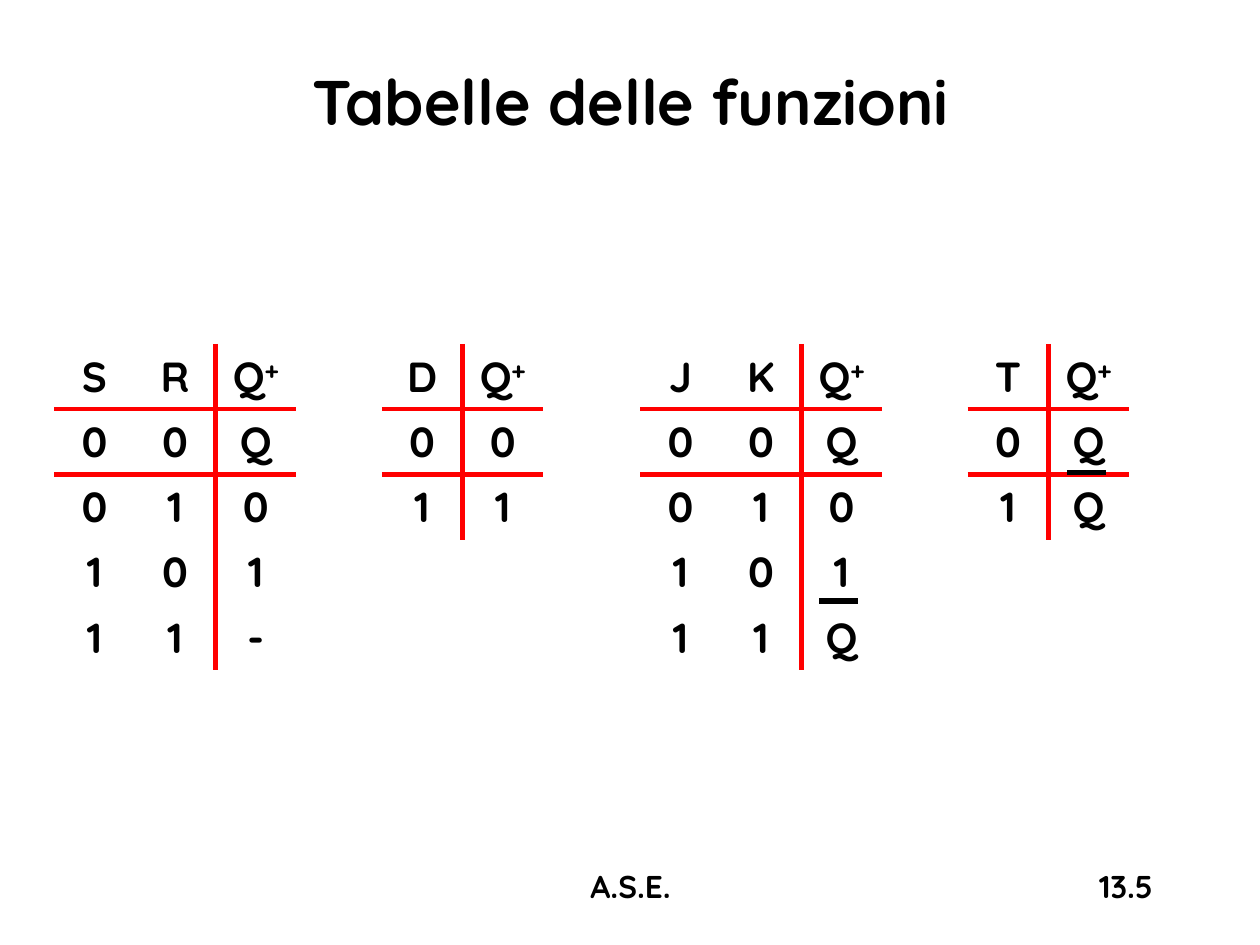
from pptx import Presentation
from pptx.dml.color import RGBColor
from pptx.enum import shapes, text
from pptx.oxml import parse_xml
from pptx.oxml.ns import nsdecls, qn
from pptx.util import Inches, Pt

FONT = "Quicksand"
COLORS = {"ink": "000000", "rule": "FF0000", "paper": "FFFFFF"}
NO_STYLE = "{2D5ABB26-0587-4C30-8999-92F81FD0307C}"
COL_W, ROW_H, TABLE_TOP = 0.64, 0.5, 2.73
BAR_W = 0.31

# Left edge and rows of each truth table
TABLES = [
    (0.43, ["S R Q+", "0 0 Q", "0 1 0", "1 0 1", "1 1 -"]),
    (3.03, ["D Q+", "0 0", "1 1"]),
    (5.08, ["J K Q+", "0 0 Q", "0 1 0", "1 0 1", "1 1 Q"]),
    (7.68, ["T Q+", "0 Q", "1 Q"]),
]
# Negation bars over a Q: left, height on the slide
BARS = [(6.5, 4.77), (8.47, 3.75)]


def format_paragraph(p, size, align):
    p.alignment = align
    for r in p.runs:
        r.font.name = FONT
        r.font.size = Pt(size)
        r.font.bold = True
        r.font.color.rgb = RGBColor.from_string(COLORS["ink"])


def set_borders(cell, sides):
    """Draw red rules on the given sides, in the order L, R, T, B."""
    tcPr = cell._tc.get_or_add_tcPr()
    for i, side in enumerate(sides):
        tcPr.insert(i, parse_xml(
            f'<a:ln{side} {nsdecls("a")} w="{Pt(3)}"><a:solidFill>'
            f'<a:srgbClr val="{COLORS["rule"]}"/></a:solidFill></a:ln{side}>'))


def add_title(s, box, title):
    sp = s.shapes.title
    sp.left, sp.top, sp.width, sp.height = map(Inches, box)
    tf = sp.text_frame
    tf.text = title
    tf.vertical_anchor = text.MSO_ANCHOR.MIDDLE
    format_paragraph(tf.paragraphs[0], 36, text.PP_ALIGN.CENTER)


def add_truth_table(s, left, top, lines):
    rows = [line.split() for line in lines]
    n_rows, n_cols = len(rows), len(rows[0])
    table = s.shapes.add_table(n_rows, n_cols, Inches(left), Inches(top),
                               Inches(COL_W * n_cols), Inches(ROW_H * n_rows)).table
    table.first_row = table.horz_banding = False
    table._tbl.tblPr.find(qn("a:tableStyleId")).text = NO_STYLE
    for i, row in enumerate(rows):
        for j, value in enumerate(row):
            cell = table.cell(i, j)
            cell.fill.background()
            p = cell.text_frame.paragraphs[0]
            p.text = value[0]
            if value.endswith("+"):
                r = p.add_run()
                r.text = "+"
                r.font._element.set("baseline", "30000")
            format_paragraph(p, 24, text.PP_ALIGN.CENTER)
            # Rules under the header row and before the output column
            sides = {"L": j == n_cols - 1, "R": j == n_cols - 2,
                     "T": i == 1, "B": i == 0}
            set_borders(cell, [side for side, on in sides.items() if on])


def add_bar(s, left, top):
    line = s.shapes.add_connector(shapes.MSO_CONNECTOR.STRAIGHT, Inches(left),
                                  Inches(top), Inches(left + BAR_W), Inches(top))
    line.line.color.rgb = RGBColor.from_string(COLORS["ink"])
    line.line.width = Pt(3)
    line._element.spPr.append(parse_xml(f'<a:effectLst {nsdecls("a")}/>'))


def add_footer(s, box, words, align):
    tf = s.shapes.add_textbox(*map(Inches, box)).text_frame
    tf.word_wrap = True
    tf.text = words
    format_paragraph(tf.paragraphs[0], 18, align)


def main():
    prs = Presentation()
    prs.slide_width, prs.slide_height = Inches(10), Inches(7.5)
    s = prs.slides.add_slide(prs.slide_layouts[5])
    s.background.fill.solid()
    s.background.fill.fore_color.rgb = RGBColor.from_string(COLORS["paper"])

    add_title(s, (0.17, 0.17, 9.67, 1.25), "Tabelle delle funzioni")
    for left, lines in TABLES:
        add_truth_table(s, left, TABLE_TOP, lines)
    for left, top in BARS:
        add_bar(s, left, top)
    add_footer(s, (7.17, 6.83, 2.08, 0.5), "13.5", text.PP_ALIGN.RIGHT)
    add_footer(s, (3.42, 6.83, 3.17, 0.5), "A.S.E.", text.PP_ALIGN.CENTER)
    prs.save("out.pptx")


if __name__ == "__main__":
    main()
